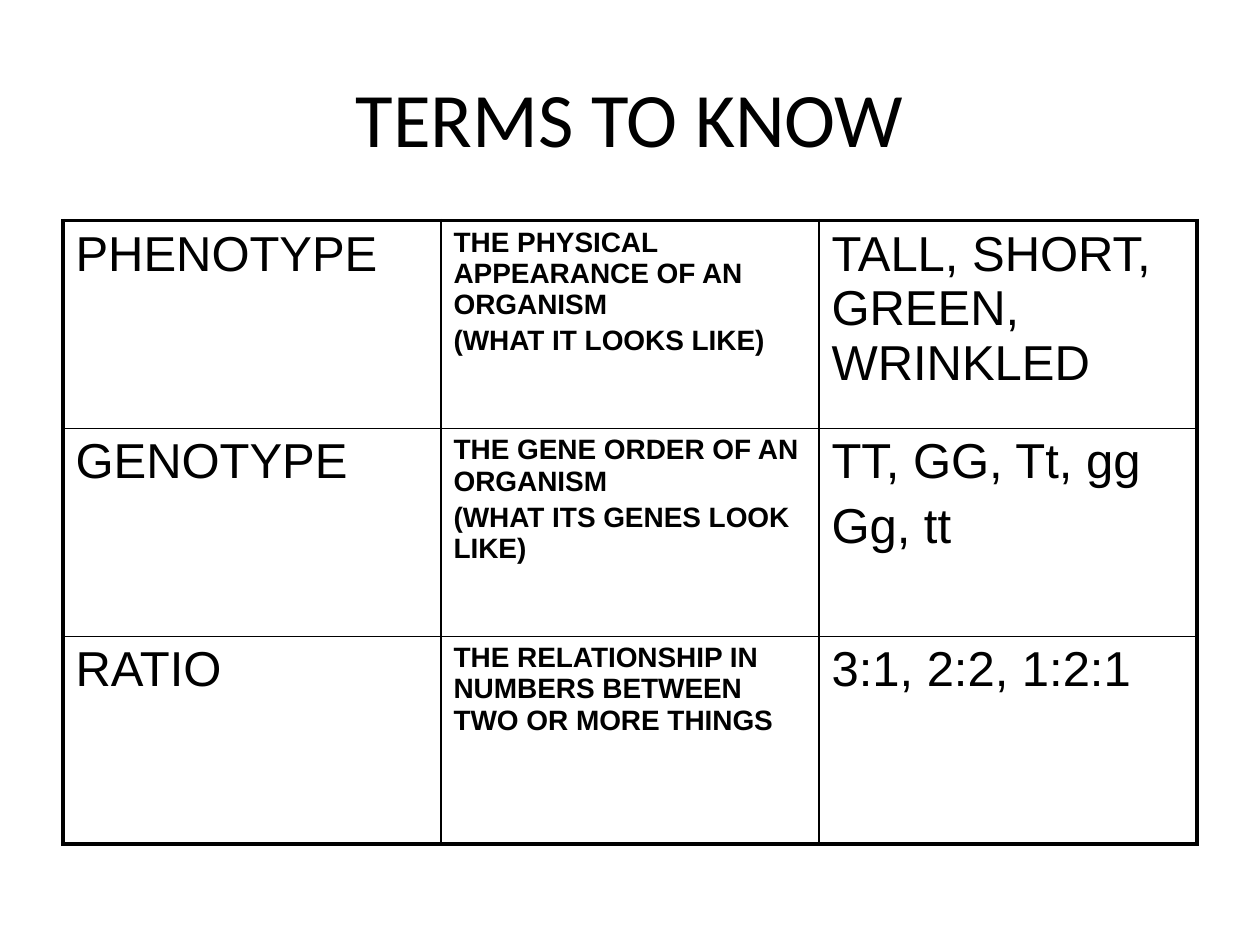
from lxml.etree import SubElement
from pptx import Presentation
from pptx.dml.color import RGBColor
from pptx.enum.text import MSO_ANCHOR, PP_ALIGN
from pptx.oxml.ns import qn
from pptx.util import Pt

BLACK = "000000"
TERMS = [
    (["PHENOTYPE"],
     ["THE PHYSICAL APPEARANCE OF AN ORGANISM", "(WHAT IT LOOKS LIKE)"],
     ["TALL, SHORT, GREEN, WRINKLED"]),
    (["GENOTYPE"],
     ["THE GENE ORDER OF AN ORGANISM", "(WHAT ITS GENES LOOK LIKE)"],
     ["TT, GG, Tt, gg", "Gg, tt"]),
    (["RATIO"],
     ["THE RELATIONSHIP IN NUMBERS BETWEEN TWO OR MORE THINGS"],
     ["3:1, 2:2, 1:2:1"]),
]


def color(value):
    """Turn a hex string into a colour."""
    return RGBColor.from_string(value)


def write(tf, lines, size, font="Arial", bold=False, align=PP_ALIGN.LEFT):
    """Write each line as a paragraph, spaced by a fifth of the text size."""
    for i, line in enumerate(lines):
        p = tf.add_paragraph() if i else tf.paragraphs[0]
        p.alignment = align
        if i:
            p.space_before = Pt(size * 0.2)
        r = p.add_run()
        r.text = line
        r.font.size = Pt(size)
        r.font.name = font
        r.font.bold = bold
        r.font.color.rgb = color(BLACK)


def set_borders(cell, widths):
    """Draw the left, right, top and bottom borders of a cell."""
    tc_pr = cell._tc.get_or_add_tcPr()
    for i, (side, width) in enumerate(zip("LRTB", widths)):
        ln = SubElement(tc_pr, qn(f"a:ln{side}"), w=str(Pt(width)))
        fill = SubElement(ln, qn("a:solidFill"))
        SubElement(fill, qn("a:srgbClr"), val=BLACK)
        tc_pr.insert(i, ln)


def add_title(s, text, left, top, width, height):
    """Place the title in the given box."""
    sp = s.shapes.title
    sp.left, sp.top, sp.width, sp.height = map(Pt, (left, top, width, height))
    sp.text_frame.vertical_anchor = MSO_ANCHOR.MIDDLE
    write(sp.text_frame, [text], 44, font="Calibri", align=PP_ALIGN.CENTER)


def add_terms(s, rows, left, top, width, height):
    """Place the table of terms, with a thick frame, in the given box."""
    n_rows, n_cols = len(rows), len(rows[0])
    table = s.shapes.add_table(
        n_rows, n_cols, Pt(left), Pt(top), Pt(width), Pt(height)).table
    table.first_row = table.horz_banding = False
    for i, row in enumerate(rows):
        for j, lines in enumerate(row):
            cell = table.cell(i, j)
            cell.fill.background()
            outer = (j == 0, j == n_cols - 1, i == 0, i == n_rows - 1)
            set_borders(cell, [2.25 if edge else 1 for edge in outer])
            definition = j == 1
            write(cell.text_frame, lines, 16 if definition else 28,
                  bold=definition)


def main():
    """Build the slide and save it."""
    prs = Presentation()
    prs.slide_width, prs.slide_height = Pt(720), Pt(540)
    s = prs.slides.add_slide(prs.slide_layouts[5])
    add_title(s, "TERMS TO KNOW", 36, 21.6, 648, 90)
    add_terms(s, TERMS, 36, 126, 648, 356.4)
    prs.save("out.pptx")


if __name__ == "__main__":
    main()
